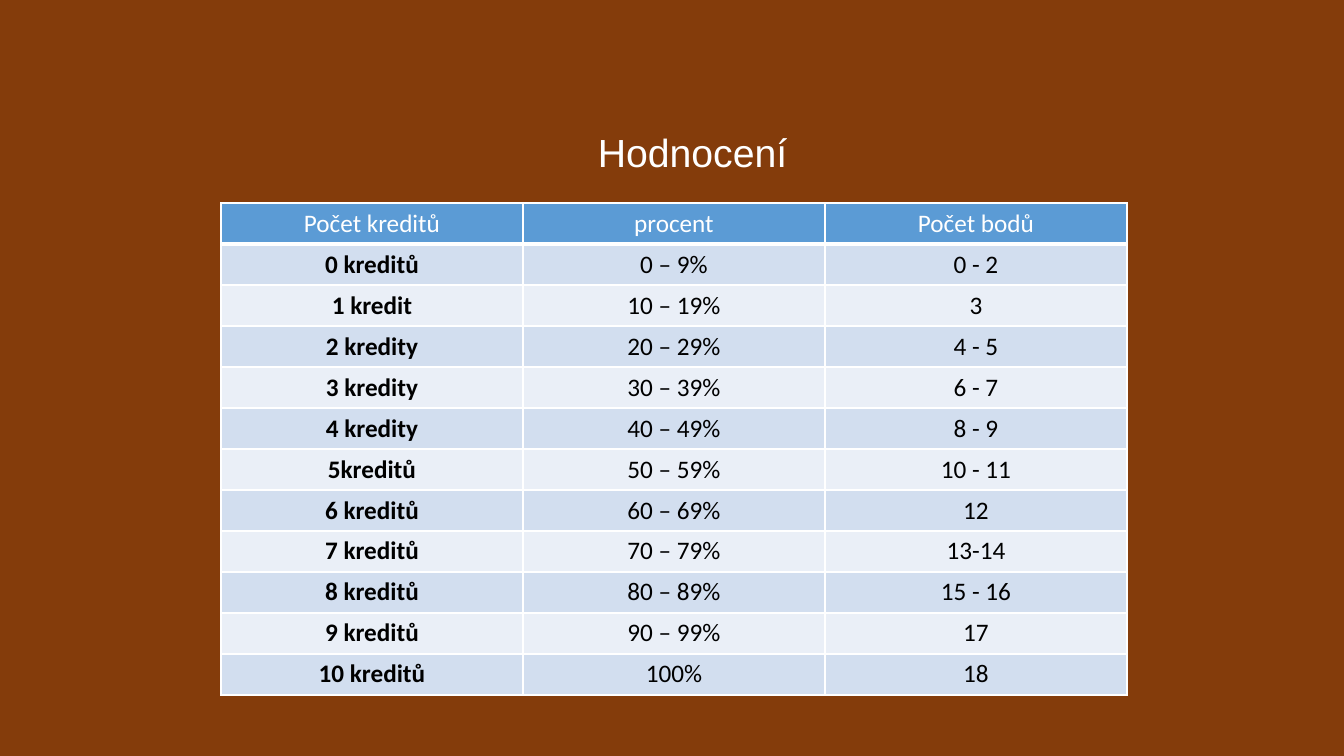
from lxml import etree
from pptx import Presentation
from pptx import util as u
from pptx.dml.color import RGBColor
from pptx.enum import text
from pptx.oxml import ns

PX = 914400 / 100.8
SLIDE_SIZE = (u.Inches(13.333), u.Inches(7.5))

BROWN = RGBColor(0x84, 0x3C, 0x0B)
WHITE = RGBColor(0xFF, 0xFF, 0xFF)
BLACK = RGBColor(0, 0, 0)
BLUE = RGBColor(0x5B, 0x9B, 0xD5)
BANDS = (RGBColor(0xEA, 0xEF, 0xF7), RGBColor(0xD2, 0xDE, 0xEF))

TITLE_FONT = {"name": "Arial", "size": u.Pt(28), "bold": False}
CELL_FONT = {"name": "Calibri", "size": u.Pt(18), "bold": False}
CREDIT_FONT = {**CELL_FONT, "bold": True}

HEADINGS = ("Počet kreditů", "procent", "Počet bodů")
GRADES = (
    ("0 kreditů", "0 – 9%", "0 - 2"),
    ("1 kredit", "10 – 19%", "3"),
    ("2 kredity", "20 – 29%", "4 - 5"),
    ("3 kredity", "30 – 39%", "6 - 7"),
    ("4 kredity", "40 – 49%", "8 - 9"),
    ("5kreditů", "50 – 59%", "10 - 11"),
    ("6 kreditů", "60 – 69%", "12"),
    ("7 kreditů", "70 – 79%", "13-14"),
    ("8 kreditů", "80 – 89%", "15 - 16"),
    ("9 kreditů", "90 – 99%", "17"),
    ("10 kreditů", "100%", "18"),
)
COLUMN_WIDTH, ROW_HEIGHT = 302, 41


def px(*lengths):
    return [u.Emu(round(length * PX)) for length in lengths]


def write(frame, words, font, color):
    """Put one centred line of formatted text in a text frame."""
    paragraph = frame.paragraphs[0]
    paragraph.alignment = text.PP_ALIGN.CENTER
    run = paragraph.add_run()
    run.text = words
    for key, value in font.items():
        setattr(run.font, key, value)
    run.font.color.rgb = color
    return paragraph


def add_title(slide, words):
    title = slide.shapes.add_textbox(*px(445, 106, 495, 98))
    frame = title.text_frame
    frame.word_wrap = True
    frame.vertical_anchor = text.MSO_ANCHOR.MIDDLE
    write(frame, words, TITLE_FONT, WHITE).line_spacing = 0.9


def add_borders(cell, bottom):
    """Draw white cell edges, 1 pt except for the bottom one."""
    properties = cell._tc.get_or_add_tcPr()
    for side, points in zip("LRTB", (1, 1, 1, bottom)):
        edge = etree.SubElement(properties, ns.qn(f"a:ln{side}"), w=str(u.Pt(points)))
        fill = etree.SubElement(edge, ns.qn("a:solidFill"))
        etree.SubElement(fill, ns.qn("a:srgbClr"), val=str(WHITE))


def format_cell(cell, words, font, color, background, bottom=1):
    add_borders(cell, bottom)
    cell.fill.solid()
    cell.fill.fore_color.rgb = background
    write(cell.text_frame, words, font, color)


def add_grades(slide):
    rows, columns = len(GRADES) + 1, len(HEADINGS)
    place = px(221, 203, columns * COLUMN_WIDTH, rows * ROW_HEIGHT)
    grades = slide.shapes.add_table(rows, columns, *place).table
    for column, heading in enumerate(HEADINGS):
        format_cell(grades.cell(0, column), heading, CELL_FONT, WHITE, BLUE, bottom=3)
    for row, grade in enumerate(GRADES, 1):
        for column, words in enumerate(grade):
            font = CELL_FONT if column else CREDIT_FONT
            format_cell(grades.cell(row, column), words, font, BLACK, BANDS[row % 2])


def main():
    deck = Presentation()
    deck.slide_width, deck.slide_height = SLIDE_SIZE
    slide = deck.slides.add_slide(deck.slide_layouts[6])
    slide.background.fill.solid()
    slide.background.fill.fore_color.rgb = BROWN
    add_title(slide, "Hodnocení")
    add_grades(slide)
    deck.save("out.pptx")


if __name__ == "__main__":
    main()
